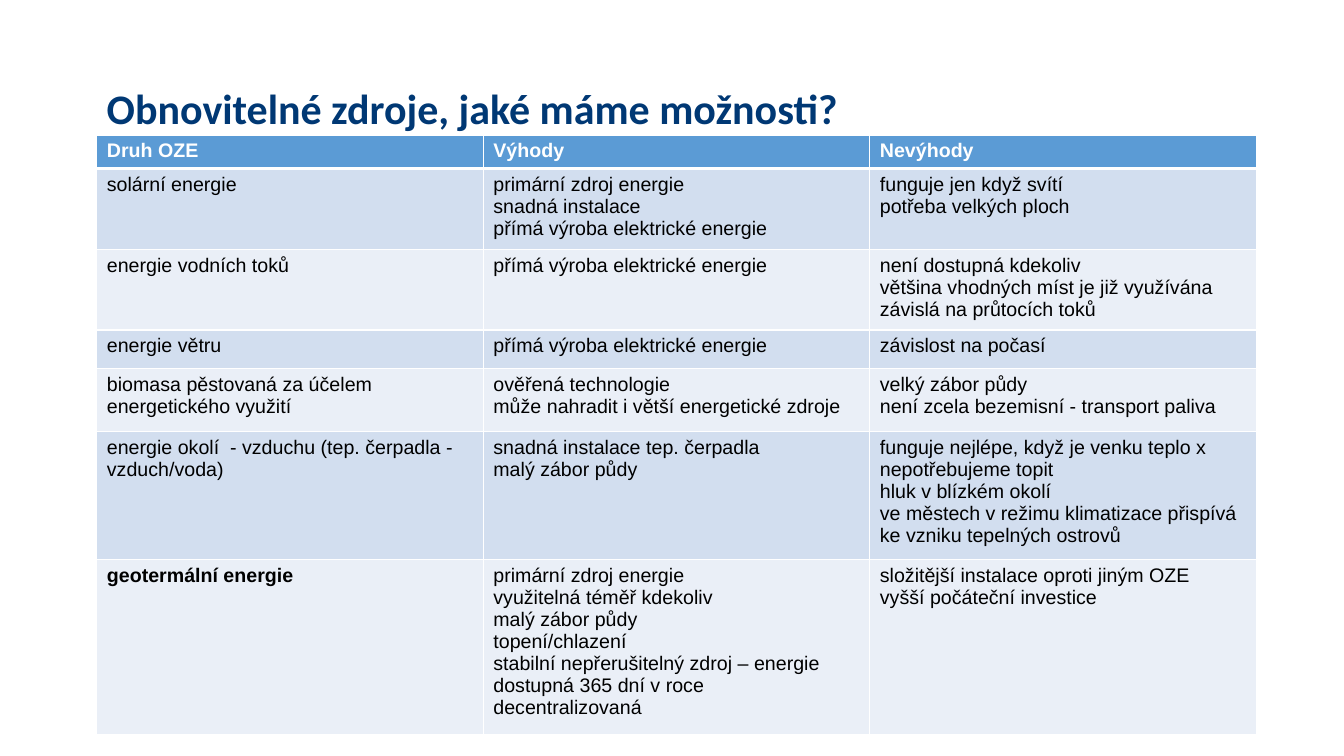
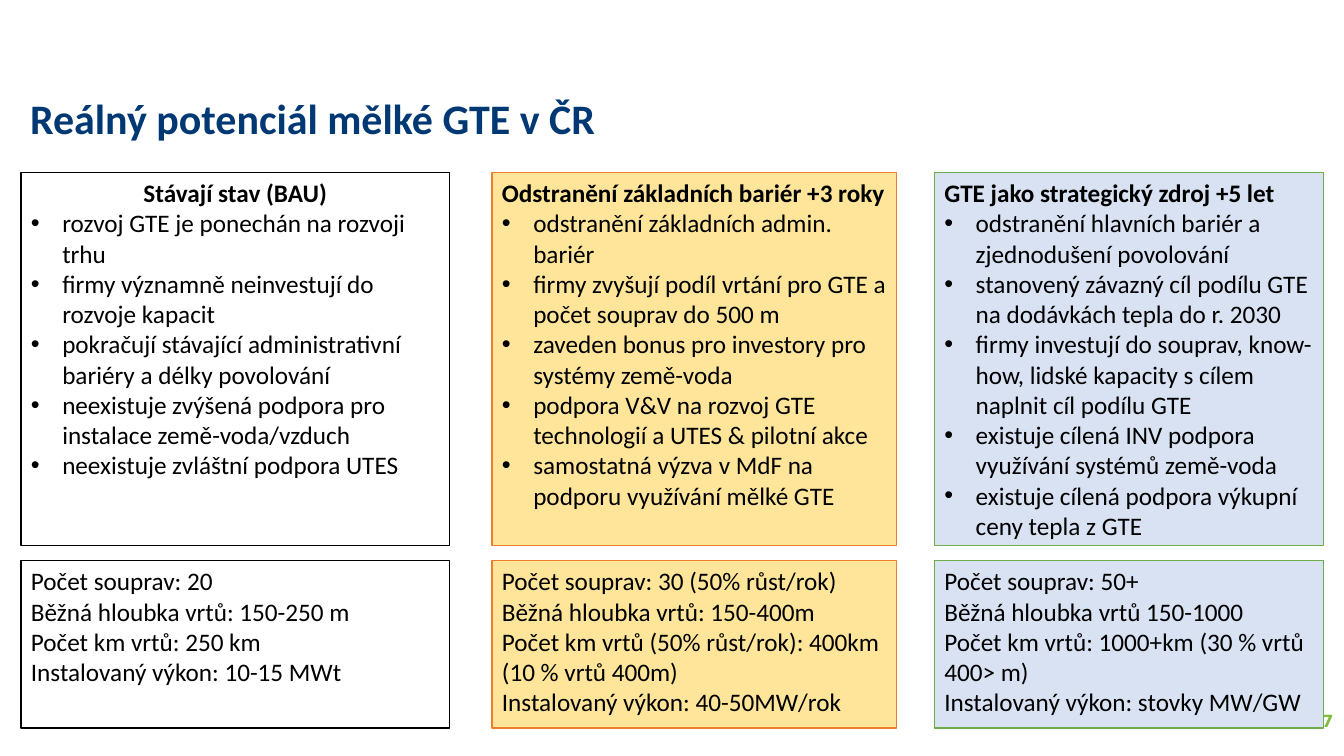
from dataclasses import dataclass

from lxml.etree import SubElement
from pptx import Presentation
from pptx.dml.color import RGBColor as Rgb
from pptx.enum.shapes import MSO_SHAPE as Preset
from pptx.enum.text import MSO_ANCHOR as Anchor, PP_ALIGN as Align
from pptx.oxml.ns import qn
from pptx.slide import Slide
from pptx.table import _Cell as Cell
from pptx.text.text import TextFrame, _Paragraph as Paragraph
from pptx.util import Cm, Pt


@dataclass(frozen=True)
class Theme:
    title_font: str = "Calibri"
    table_font: str = "Arial"
    number_font: str = "DejaVu Sans"
    title_size: int = 30
    body_size: int = 18
    table_size: int = 14
    number_size: int = 12
    navy: str = "003874"
    green: str = "80BB3D"
    black: str = "000000"
    white: str = "FFFFFF"
    header_fill: str = "5B9BD5"
    bands: tuple[str, str] = ("D2DEEF", "EAEFF7")


@dataclass(frozen=True)
class Area:
    """Position and size in centimetres."""
    left: float
    top: float
    width: float
    height: float

    def emu(self) -> tuple[int, int, int, int]:
        return Cm(self.left), Cm(self.top), Cm(self.width), Cm(self.height)


@dataclass(frozen=True)
class Source:
    kind: str
    benefits: tuple[str, ...]
    drawbacks: tuple[str, ...]
    height: float
    highlighted: bool = False


@dataclass(frozen=True)
class Scenario:
    left: float
    width: float
    fill: str
    border: str
    heading: str
    heading_align: Align
    measures: tuple[str, ...]
    outcomes: tuple[str, ...]


THEME = Theme()

TABLE_HEAD = ("Druh OZE", "Výhody", "Nevýhody")
TABLE_LEFT, TABLE_TOP = 2.44, 3.4
COLUMN_WIDTH, HEAD_HEIGHT = 9.74, 0.81
SOURCES = (
    Source("solární energie",
           ("primární zdroj energie", "snadná instalace",
            "přímá výroba elektrické energie"),
           ("funguje jen když svítí", "potřeba velkých ploch"), 1.98),
    Source("energie vodních toků",
           ("přímá výroba elektrické energie",),
           ("není dostupná kdekoliv",
            "většina vhodných míst je již využívána",
            "závislá na průtocích toků"), 1.93),
    Source("energie větru",
           ("přímá výroba elektrické energie",),
           ("závislost na počasí",), 0.97),
    Source("biomasa pěstovaná za účelem energetického využití",
           ("ověřená technologie",
            "může nahradit i větší energetické zdroje"),
           ("velký zábor půdy",
            "není zcela bezemisní - transport paliva"), 1.59),
    Source("energie okolí  - vzduchu (tep. čerpadla - vzduch/voda)",
           ("snadná instalace tep. čerpadla", "malý zábor půdy"),
           ("funguje nejlépe, když je venku teplo x nepotřebujeme topit",
            "hluk v blízkém okolí",
            "ve městech v režimu klimatizace přispívá ke vzniku "
            "tepelných ostrovů"), 3.14),
    Source("geotermální energie",
           ("primární zdroj energie", "využitelná téměř kdekoliv",
            "malý zábor půdy", "topení/chlazení",
            "stabilní nepřerušitelný zdroj – energie dostupná 365 dní v roce",
            "decentralizovaná"),
           ("složitější instalace oproti jiným OZE",
            "vyšší počáteční investice"), 4.12, highlighted=True),
)

MEASURES_TOP, MEASURES_HEIGHT = 4.35, 9.4
OUTCOMES_TOP, OUTCOMES_HEIGHT = 14.13, 4.22
BULLET_INDENT = 0.79
SCENARIOS = (
    Scenario(0.53, 10.8, "FFFFFF", "000000",
             "Stávají stav (BAU)", Align.CENTER,
             ("rozvoj GTE je ponechán na rozvoji trhu",
              "firmy významně neinvestují do rozvoje kapacit",
              "pokračují stávající administrativní bariéry a délky povolování",
              "neexistuje zvýšená podpora pro instalace země-voda/vzduch",
              "neexistuje zvláštní podpora UTES"),
             ("Počet souprav: 20",
              "Běžná hloubka vrtů: 150-250 m",
              "Počet km vrtů: 250 km",
              "Instalovaný výkon: 10-15 MWt")),
    Scenario(12.4, 10.19, "FEE599", "ED7D31",
             "Odstranění základních bariér +3 roky", Align.LEFT,
             ("odstranění základních admin. bariér",
              "firmy zvyšují podíl vrtání pro GTE a počet souprav do 500 m",
              "zaveden bonus pro investory pro systémy země-voda",
              "podpora V&V na rozvoj GTE technologií a UTES & pilotní akce",
              "samostatná výzva v MdF na podporu využívání mělké GTE"),
             ("Počet souprav: 30 (50% růst/rok)",
              "Běžná hloubka vrtů: 150-400m",
              "Počet km vrtů (50% růst/rok): 400km (10 % vrtů 400m)",
              "Instalovaný výkon: 40-50MW/rok")),
    Scenario(23.55, 9.8, "D8E2F3", "70AD47",
             "GTE jako strategický zdroj +5 let", Align.LEFT,
             ("odstranění hlavních bariér a zjednodušení povolování",
              "stanovený závazný cíl podílu GTE na dodávkách tepla do r. 2030",
              "firmy investují do souprav, know-how, lidské kapacity s cílem "
              "naplnit cíl podílu GTE",
              "existuje cílená INV podpora využívání systémů země-voda",
              "existuje cílená podpora výkupní ceny tepla z GTE"),
             ("Počet souprav: 50+",
              "Běžná hloubka vrtů 150-1000",
              "Počet km vrtů: 1000+km (30 % vrtů 400> m)",
              "Instalovaný výkon: stovky MW/GW")),
)


def style(paragraph: Paragraph, font: str, size: int, color: str,
          bold: bool = False) -> None:
    paragraph.font.name = font
    paragraph.font.size = Pt(size)
    paragraph.font.bold = bold
    paragraph.font.color.rgb = Rgb.from_string(color)


def add_bullet(paragraph: Paragraph) -> None:
    properties = paragraph._p.get_or_add_pPr()
    properties.set("marL", str(Cm(BULLET_INDENT)))
    properties.set("indent", str(-Cm(BULLET_INDENT)))
    SubElement(properties, qn("a:buFont"), typeface="Arial")
    SubElement(properties, qn("a:buChar"), char="•")


def fill_lines(frame: TextFrame, lines: tuple[str, ...]) -> list[Paragraph]:
    """Write one paragraph per line and return the paragraphs."""
    frame.text = "\n".join(lines)
    return list(frame.paragraphs)


def add_label(slide: Slide, area: Area, text: str) -> Paragraph:
    frame = slide.shapes.add_textbox(*area.emu()).text_frame
    frame.word_wrap = True
    return fill_lines(frame, (text,))[0]


def add_title(slide: Slide, area: Area, text: str) -> None:
    title = add_label(slide, area, text)
    title.line_spacing = 0.9
    style(title, THEME.title_font, THEME.title_size, THEME.navy, bold=True)


def add_page_number(slide: Slide, number: str) -> None:
    page = add_label(slide, Area(30.2, 17.78, 3.66, 1.27), number)
    page.alignment = Align.RIGHT
    style(page, THEME.number_font, THEME.number_size, THEME.green, bold=True)


def set_borders(cell: Cell, top: int, bottom: int) -> None:
    """Draw white borders; the side ones are one point wide."""
    properties = cell._tc.get_or_add_tcPr()
    widths = {"a:lnL": 1, "a:lnR": 1, "a:lnT": top, "a:lnB": bottom}
    for side, width in widths.items():
        line = SubElement(properties, qn(side), w=str(Pt(width)))
        paint = SubElement(line, qn("a:solidFill"))
        SubElement(paint, qn("a:srgbClr"), val=THEME.white)


def fill_cell(cell: Cell, lines: tuple[str, ...], fill: str, color: str,
              bold: bool, top: int = 1, bottom: int = 1) -> None:
    set_borders(cell, top, bottom)
    cell.fill.solid()
    cell.fill.fore_color.rgb = Rgb.from_string(fill)
    for paragraph in fill_lines(cell.text_frame, lines):
        style(paragraph, THEME.table_font, THEME.table_size, color, bold)


def add_source_table(slide: Slide) -> None:
    heights = [HEAD_HEIGHT] + [source.height for source in SOURCES]
    area = Area(TABLE_LEFT, TABLE_TOP,
                COLUMN_WIDTH * len(TABLE_HEAD), sum(heights))
    table = slide.shapes.add_table(
        len(heights), len(TABLE_HEAD), *area.emu()).table
    for row, height in zip(table.rows, heights):
        row.height = Cm(height)
    for column, heading in enumerate(TABLE_HEAD):
        table.columns[column].width = Cm(COLUMN_WIDTH)
        fill_cell(table.cell(0, column), (heading,), THEME.header_fill,
                  THEME.white, bold=True, bottom=3)
    for index, source in enumerate(SOURCES):
        contents = ((source.kind,), source.benefits, source.drawbacks)
        for column, lines in enumerate(contents):
            fill_cell(table.cell(index + 1, column), lines,
                      THEME.bands[index % 2], THEME.black,
                      bold=source.highlighted and column == 0,
                      top=1 if index else 3)


def add_panel(slide: Slide, scenario: Scenario, top: float, height: float,
              lines: tuple[str, ...]) -> list[Paragraph]:
    """Draw a framed box in the scenario's colours, return its paragraphs."""
    area = Area(scenario.left, top, scenario.width, height)
    panel = slide.shapes.add_shape(Preset.RECTANGLE, *area.emu())
    panel.shadow.inherit = False
    panel.fill.solid()
    panel.fill.fore_color.rgb = Rgb.from_string(scenario.fill)
    panel.line.color.rgb = Rgb.from_string(scenario.border)
    panel.line.width = Pt(1)
    panel.text_frame.word_wrap = True
    panel.text_frame.vertical_anchor = Anchor.TOP
    paragraphs = fill_lines(panel.text_frame, lines)
    for paragraph in paragraphs:
        paragraph.alignment = Align.LEFT
    return paragraphs


def add_scenario(slide: Slide, scenario: Scenario) -> None:
    heading, *measures = add_panel(
        slide, scenario, MEASURES_TOP, MEASURES_HEIGHT,
        (scenario.heading, *scenario.measures))
    heading.alignment = scenario.heading_align
    style(heading, THEME.title_font, THEME.body_size, THEME.black, bold=True)
    for measure in measures:
        add_bullet(measure)
    outcomes = add_panel(slide, scenario, OUTCOMES_TOP, OUTCOMES_HEIGHT,
                         scenario.outcomes)
    for paragraph in measures + outcomes:
        style(paragraph, THEME.title_font, THEME.body_size, THEME.black)


def main() -> None:
    deck = Presentation()
    deck.slide_width, deck.slide_height = Cm(33.87), Cm(19.05)
    blank = deck.slide_layouts[6]

    sources = deck.slides.add_slide(blank)
    add_title(sources, Area(2.44, 2.11, 29.21, 1.98),
              "Obnovitelné zdroje, jaké máme možnosti?")
    add_source_table(sources)

    potential = deck.slides.add_slide(blank)
    add_page_number(potential, "7")
    add_title(potential, Area(0.51, 2.36, 18.49, 1.57),
              "Reálný potenciál mělké GTE v ČR")
    for scenario in SCENARIOS:
        add_scenario(potential, scenario)

    deck.save("out.pptx")


if __name__ == "__main__":
    main()
